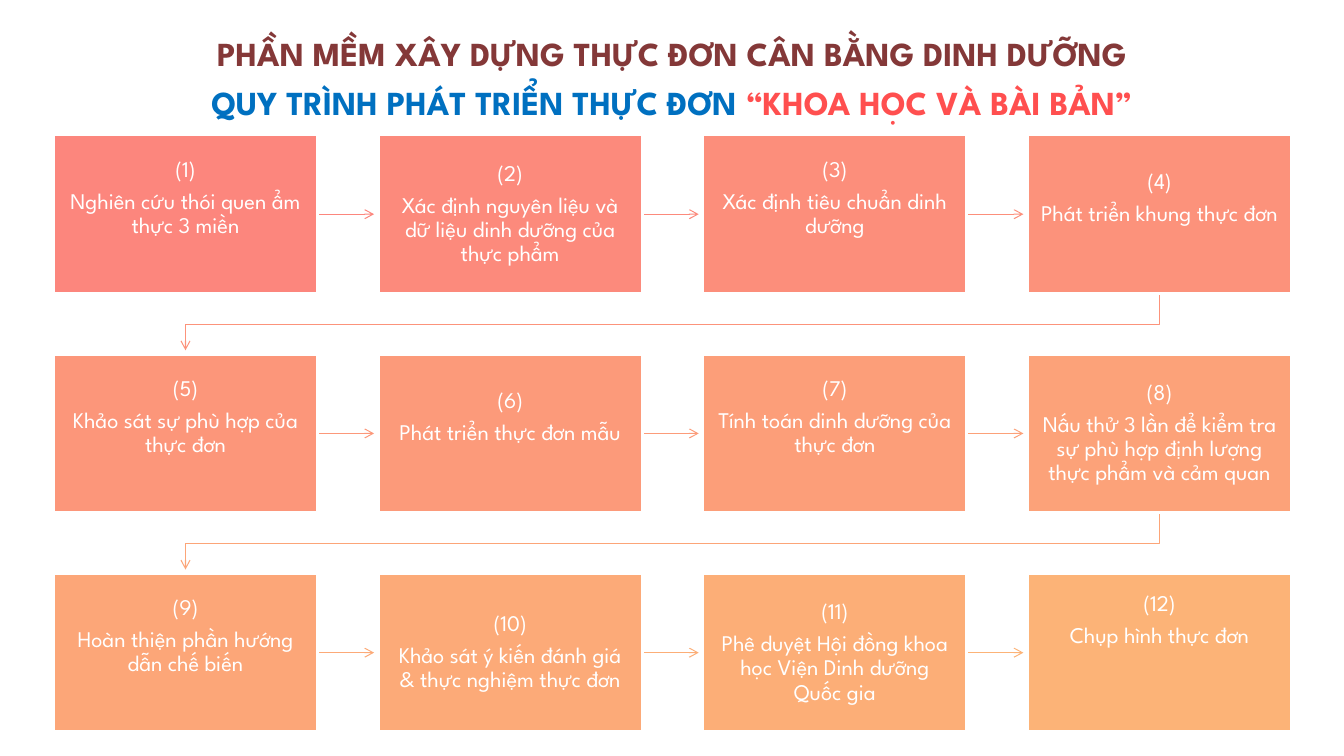
from lxml import etree
from pptx import Presentation
from pptx.dml.color import RGBColor
from pptx.enum.shapes import MSO_CONNECTOR, MSO_SHAPE
from pptx.enum.text import MSO_ANCHOR, PP_ALIGN
from pptx.oxml.ns import qn
from pptx.util import Inches, Pt

RECTANGLE = MSO_SHAPE.RECTANGLE
STRAIGHT = MSO_CONNECTOR.STRAIGHT
CENTER = PP_ALIGN.CENTER
TOP, MIDDLE = MSO_ANCHOR.TOP, MSO_ANCHOR.MIDDLE

FONT = "League Spartan"
WHITE = RGBColor(0xFF, 0xFF, 0xFF)
MAROON = RGBColor(0x84, 0x38, 0x38)
BLUE = RGBColor(0x00, 0x70, 0xC0)
RED = RGBColor(0xFF, 0x4F, 0x4F)
CORAL = RGBColor(0xFC, 0x86, 0x7D)
APRICOT = RGBColor(0xFC, 0xB3, 0x77)

COLUMNS = 4
GRID_LEFT, GRID_TOP = 0.53, 1.34
COLUMN_STEP, ROW_STEP = 3.22, 4.35 / 2
BOX_WIDTH, BOX_HEIGHT = 2.62, 1.57
ARROW_GAP = 0.04
TURN_DROP = 0.31
INSET = 0.12
RAISE = 0.32

TITLE = [
    [("PHẦN MỀM XÂY DỰNG THỰC ĐƠN CÂN BẰNG DINH DƯỠNG", MAROON)],
    [("QUY TRÌNH PHÁT TRIỂN THỰC ĐƠN ", BLUE), ("“KHOA HỌC VÀ BÀI BẢN”", RED)],
]
STEPS = [
    ("Nghiên cứu thói quen ẩm thực 3 miền", 1),
    ("Xác định nguyên liệu và dữ liệu dinh dưỡng của thực phẩm", 0),
    ("Xác định tiêu chuẩn dinh dưỡng", 1),
    ("Phát triển khung thực đơn", 1),
    ("Khảo sát sự phù hợp của thực đơn", 1),
    ("Phát triển thực đơn mẫu", 1),
    ("Tính toán dinh dưỡng của thực đơn", 1),
    ("Nấu thử 3 lần để kiểm tra sự phù hợp định lượng thực phẩm và cảm quan", 0),
    ("Hoàn thiện phần hướng dẫn chế biến", 1),
    ("Khảo sát ý kiến đánh giá & thực nghiệm thực đơn", 0),
    ("Phê duyệt Hội đồng khoa học Viện Dinh dưỡng Quốc gia", 0),
    ("Chụp hình thực đơn", 2),
]


def blend(share):
    return RGBColor(*(int(a + (b - a) * share) for a, b in zip(CORAL, APRICOT)))


class ProcessSlide:
    """Draws a titled grid of numbered steps joined by arrows."""

    def __init__(self, presentation):
        self.slide = presentation.slides.add_slide(presentation.slide_layouts[6])
        self.shapes = self.slide.shapes
        self.width, self.height = presentation.slide_width, presentation.slide_height

    def corner(self, index):
        row, column = divmod(index, COLUMNS)
        return GRID_LEFT + column * COLUMN_STEP, GRID_TOP + row * ROW_STEP

    def title(self, lines):
        box = self.shapes.add_textbox(
            int(self.width * 0.1), Inches(0.28), int(self.width * 0.8), Inches(0.83))
        frame = box.text_frame
        frame.word_wrap = True
        frame.vertical_anchor = TOP
        for number, pieces in enumerate(lines):
            paragraph = frame.add_paragraph() if number else frame.paragraphs[0]
            paragraph.alignment = CENTER
            if number:
                paragraph.space_before = Pt(6)
            paragraph.font.name, paragraph.font.size = FONT, Pt(24)
            paragraph.font.bold = True
            for text, color in pieces:
                run = paragraph.add_run()
                run.text = text
                run.font.color.rgb = color

    def step(self, index, text, raised, color):
        left, top = self.corner(index)
        box = self.shapes.add_shape(
            RECTANGLE, Inches(left), Inches(top), Inches(BOX_WIDTH), Inches(BOX_HEIGHT))
        box.shadow.inherit = False
        box.fill.solid()
        box.fill.fore_color.rgb = color
        box.line.color.rgb, box.line.width = WHITE, Pt(2)
        frame = box.text_frame
        frame.word_wrap = True
        frame.vertical_anchor = MIDDLE
        frame.margin_left = frame.margin_right = frame.margin_top = Inches(INSET)
        frame.margin_bottom = Inches(INSET + raised * RAISE)
        frame.text = f"({index + 1})\n{text}"
        for paragraph in frame.paragraphs:
            paragraph.alignment = CENTER
            paragraph.line_spacing = 0.9
            paragraph.space_after = Pt(5.5)
            paragraph.font.name, paragraph.font.size = FONT, Pt(16)
            paragraph.font.color.rgb = WHITE

    def arrow(self, index, color):
        left, top = self.corner(index)
        if (index + 1) % COLUMNS:
            middle = Inches(top + BOX_HEIGHT / 2)
            line = self.shapes.add_connector(
                STRAIGHT, Inches(left + BOX_WIDTH), middle,
                Inches(left + COLUMN_STEP - ARROW_GAP), middle)
            etree.SubElement(line.element.spPr, qn("a:effectLst"))
        else:
            line = self.turn(left + BOX_WIDTH / 2, top + BOX_HEIGHT, index + 1)
        line.line.color.rgb, line.line.width = color, Pt(0.75)
        outline = line.element.spPr.find(qn("a:ln"))
        etree.SubElement(outline, qn("a:tailEnd"), type="arrow")

    def turn(self, start, bottom, target):
        left, top = self.corner(target)
        end = left + BOX_WIDTH / 2
        bend = bottom + TURN_DROP
        corners = [(start, bend), (end, bend), (end, top - ARROW_GAP)]
        builder = self.shapes.build_freeform(Inches(start), Inches(bottom))
        builder.add_line_segments([(Inches(x), Inches(y)) for x, y in corners], close=False)
        line = builder.convert_to_shape()
        line.shadow.inherit = False
        line.fill.background()
        return line


def main():
    presentation = Presentation()
    presentation.slide_width, presentation.slide_height = Inches(13.33), Inches(7.5)
    process = ProcessSlide(presentation)
    process.title(TITLE)
    last = len(STEPS) - 1
    for index, (text, raised) in enumerate(STEPS):
        if index < last:
            process.arrow(index, blend(index / (last - 1)))
        process.step(index, text, raised, blend(index / last))
    presentation.save("out.pptx")


if __name__ == "__main__":
    main()
